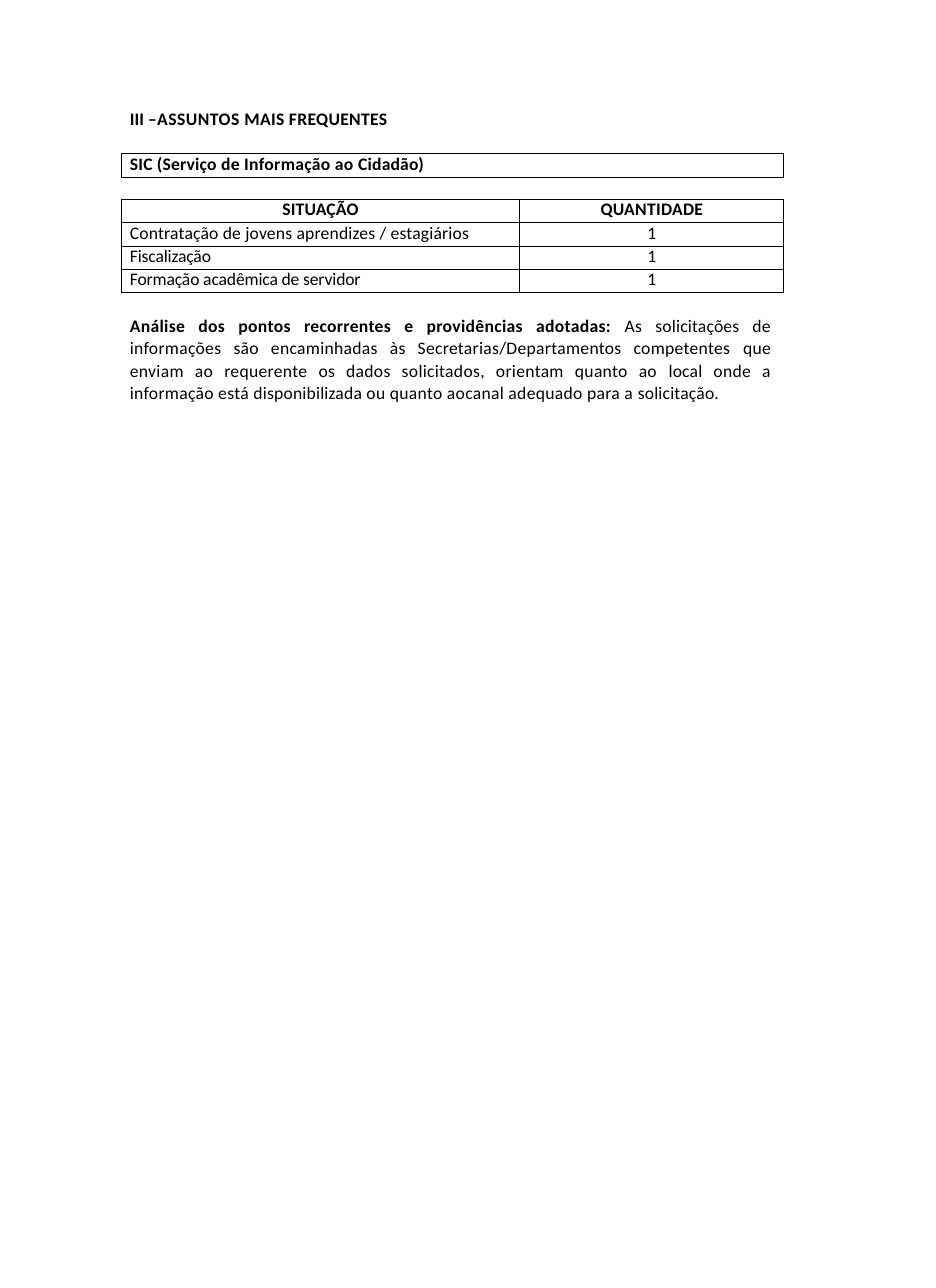
from lxml.etree import SubElement
from pptx import Presentation
from pptx.dml.color import RGBColor
from pptx.enum.shapes import MSO_SHAPE
from pptx.enum.text import MSO_ANCHOR, PP_ALIGN
from pptx.oxml.ns import qn
from pptx.util import Inches, Pt

BLACK = "000000"


def color(hex_value):
    return RGBColor.from_string(hex_value)


def write(paragraph, runs, bold=False, indent=0.01):
    """Fill a paragraph with (text, letter spacing in points) runs."""
    font = paragraph.font
    font.name, font.size, font.bold = "Calibri", Pt(11.5), bold
    font.color.rgb = color(BLACK)
    paragraph._p.get_or_add_pPr().set("marL", str(Inches(indent)))
    for text, spacing in runs:
        run = paragraph.add_run()
        run.text = text
        run.font._element.set("spc", str(round(spacing * 100)))


prs = Presentation()
prs.slide_width, prs.slide_height = Inches(8.5), Inches(11.7)
slide = prs.slides.add_slide(prs.slide_layouts[6])

# Heading, service box and analysis share the same frame settings
heading = slide.shapes.add_textbox(Inches(1.17), Inches(0.97), Inches(2.38), Inches(0.22))
service = slide.shapes.add_shape(
    MSO_SHAPE.RECTANGLE, Inches(1.1), Inches(1.39), Inches(6.01), Inches(0.22))
analysis = slide.shapes.add_textbox(Inches(1.17), Inches(2.84), Inches(5.93), Inches(0.84))
for block, top_margin in ((heading, 0.01), (service, 0), (analysis, 0.01)):
    frame = block.text_frame
    frame.word_wrap = True
    frame.vertical_anchor = MSO_ANCHOR.TOP
    frame.margin_left = frame.margin_right = frame.margin_bottom = 0
    frame.margin_top = Inches(top_margin)

title = heading.text_frame.paragraphs[0]
title.space_before = Pt(1)
write(title, [("III ", 0), ("–ASSUNTOS ", 0.3), ("MAIS FREQUENTES", 0.2)], bold=True)

service.shadow.inherit = False
service.fill.background()
service.line.color.rgb = color(BLACK)
service.line.width = Pt(0.36)
service_name = service.text_frame.paragraphs[0]
service_name.alignment = PP_ALIGN.LEFT
service_name.space_before = Pt(0.3)
write(service_name, [("SIC (Serviço ", 0.1), ("de Informação ao ", 0.2), ("Cidadão)", 0.1)],
      bold=True, indent=0.08)

# Requests: situation, quantity, letter spacing of each, line height
requests = [
    ("SITUAÇÃO", "QUANTIDADE", 0.1, 0.2, 13.6),
    ("Contratação de jovens aprendizes / estagiários", "1", 0.1, 0, None),
    ("Fiscalização", "1", -0.1, 0, 13.3),
    ("Formação acadêmica de servidor", "1", -0.1, 0, 13.6),
]
table = slide.shapes.add_table(
    len(requests), 2, Inches(1.1), Inches(1.81), Inches(6.01), Inches(0.85)).table
for column, width in zip(table.columns, (3.62, 2.39)):
    column.width = Inches(width)
for row, height in zip(table.rows, (0.21, 0.22, 0.21, 0.21)):
    row.height = Inches(height)

for r, (situation, quantity, situation_spacing, quantity_spacing, line_height) in enumerate(requests):
    entries = ((situation, situation_spacing), (quantity, quantity_spacing))
    for c, entry in enumerate(entries):
        cell = table.cell(r, c)
        cell.margin_left = cell.margin_right = cell.margin_top = cell.margin_bottom = 0
        paragraph = cell.text_frame.paragraphs[0]
        is_label = r > 0 and c == 0
        paragraph.alignment = PP_ALIGN.LEFT if is_label else PP_ALIGN.CENTER
        if line_height:
            paragraph.line_spacing = Pt(line_height)
        write(paragraph, [entry], bold=r == 0, indent=0.08 if is_label else 0.01 * c)
        properties = cell._tc.get_or_add_tcPr()
        for side in ("a:lnL", "a:lnR", "a:lnT", "a:lnB"):
            border = SubElement(properties, qn(side), w=str(Pt(0.5)))
            SubElement(SubElement(border, qn("a:solidFill")), qn("a:srgbClr"), val=BLACK)
        cell.fill.background()

analysis.text_frame.margin_right = Inches(0.1)
findings = analysis.text_frame.paragraphs[0]
findings.alignment = PP_ALIGN.JUSTIFY
findings.line_spacing = 1.06
findings.space_before = Pt(1)
write(findings, [
    ("Análise dos pontos recorrentes e providências adotadas: ", 0.2),
    ("As ", 0.2),
    ("solicitações de ", 0.1),
    ("informações são encaminhadas às Secretarias/Departamentos competentes ", 0.2),
    ("que ", 0.1),
    ("enviam ao requerente ", 0.2),
    ("os ", 0.1),
    ("dados solicitados, orientam quanto ao ", 0.2),
    ("local ", 0.1),
    ("onde a informação está ", 0.2),
    ("disponibilizada ", 0.1),
    ("ou quanto aocanal adequado para a ", 0.2),
    ("solicitação.", 0.1),
])
findings.runs[0].font.bold = True

prs.save("out.pptx")
